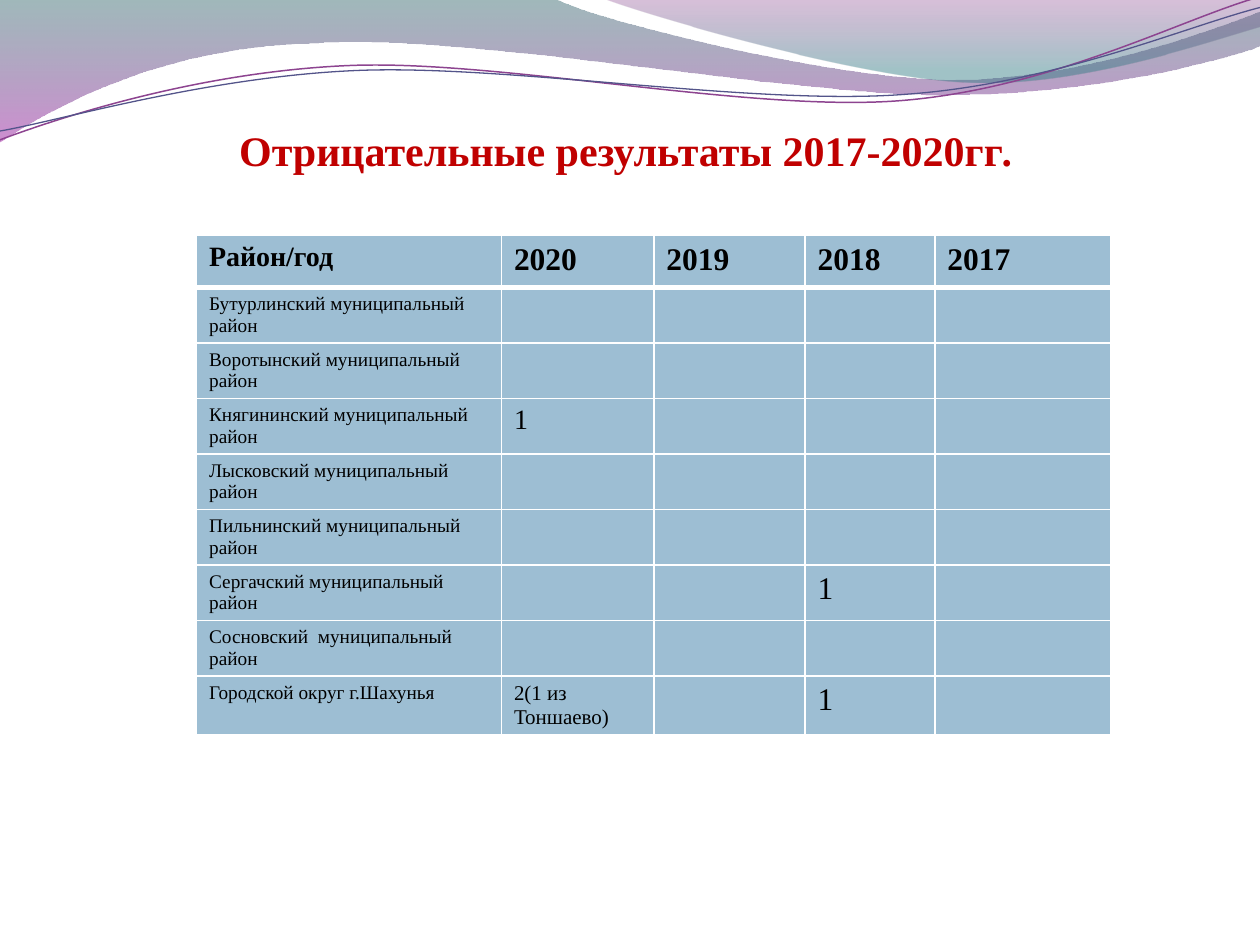
import math
from dataclasses import dataclass

import pptx
import pptx.dml.color
import pptx.enum.text
import pptx.oxml
import pptx.oxml.ns
import pptx.util
from pptx.oxml.ns import qn
from pptx.util import Inches, Pt

FONT = "Times New Roman"
COLORS = {
    "title": "C00000", "text": "000000", "cell": "9DBED3", "border": "FFFFFF",
    "teal": "2D6368", "violet": "A530A9", "plum": "7F2F82", "sea": "2F7B82",
    "purple_line": "8D4490", "blue_line": "53548A",
}
TILT = 357.3  # degrees, for the two thin lines


@dataclass
class Stop:
    position: float
    color: str
    opacity: int  # percent


@dataclass
class Band:
    """Filled outline; segments are lines (2 numbers) or Bezier curves (6)."""
    start: tuple[float, float]
    segments: list[tuple[float, ...]]
    stops: tuple[Stop, Stop]


@dataclass
class Strand:
    """Thin tilted curve, given as it lies on the slide."""
    start: tuple[float, float]
    segments: list[tuple[float, ...]]
    center: tuple[float, float]
    color: str
    width: float


BANDS = [
    Band((0, 0), [
        (4.4, -0.01),
        (4.76, 0.17, 6.64, 0.63, 7.58, 0.63),
        (8.53, 0.63, 9.58, 0.26, 10, 0.09),
        (10.01, 0.36),
        (9.83, 0.44, 8.7, 0.76, 7.46, 0.75),
        (6.22, 0.75, 3.82, 0.28, 2.57, 0.34),
        (1.29, 0.36, 0.46, 0.83, -0.01, 1.13),
        (0, 0),
    ], (Stop(0, "teal", 45), Stop(1, "violet", 55))),
    Band((4.79, -0.01), [
        (5.09, 0.11, 6.82, 0.62, 7.69, 0.65),
        (8.56, 0.69, 9.61, 0.32, 10, 0.21),
        (10, 0),
        (4.79, -0.01),
    ], (Stop(0, "plum", 30), Stop(0.8, "sea", 45))),
]
STRANDS = [
    Strand((0, 1.11), [
        (0.48, 0.93, 1.58, 0.57, 2.77, 0.52),
        (3.95, 0.47, 5.93, 0.89, 7.13, 0.8),
        (8.33, 0.71, 9.38, 0.15, 9.98, -0.02),
    ], (4.99, 0.57), "purple_line", 0.85),
    Strand((0, 1.04), [
        (0.47, 0.96, 1.64, 0.61, 2.83, 0.56),
        (4.03, 0.51, 5.97, 0.84, 7.17, 0.75),
        (8.36, 0.67, 9.41, 0.21, 10, 0.06),
    ], (5, 0.59), "blue_line", 0.75),
]

YEARS = ["2020", "2019", "2018", "2017"]
DISTRICTS = [
    "Бутурлинский муниципальный район",
    "Воротынский муниципальный район",
    "Княгининский муниципальный район",
    "Лысковский муниципальный район",
    "Пильнинский муниципальный район",
    "Сергачский муниципальный район",
    "Сосновский  муниципальный район",
    "Городской округ г.Шахунья",
]
# (row, column): text, size
RESULTS = {
    (3, 1): ("1", 16),
    (6, 3): ("1", 18),
    (8, 1): ("2(1 из Тоншаево)", 12),
    (8, 3): ("1", 18),
}
COL_WIDTHS = [2.42, 1.21, 1.2, 1.03, 1.4]
ROW_HEIGHT = 0.41


def rgb(name: str) -> pptx.dml.color.RGBColor:
    return pptx.dml.color.RGBColor.from_string(COLORS[name])


def style_run(r, size: float, color: str, bold: bool = False) -> None:
    r.font.name = FONT
    r.font.size = Pt(size)
    r.font.bold = bold
    r.font.color.rgb = rgb(color)


def untilt(numbers: tuple[float, ...], center: tuple[float, float]) -> tuple[float, ...]:
    """Turn x, y pairs back about the center, so that TILT restores them."""
    angle, (cx, cy) = math.radians(-TILT), center
    turned = []
    for x, y in zip(numbers[::2], numbers[1::2]):
        dx, dy = x - cx, y - cy
        turned += [cx + dx * math.cos(angle) - dy * math.sin(angle),
                   cy + dx * math.sin(angle) + dy * math.cos(angle)]
    return tuple(turned)


def add_outline(shapes, start: tuple[float, ...],
                segments: list[tuple[float, ...]], close: bool):
    """Build through all points, then merge each curve's three into a Bezier."""
    builder = shapes.build_freeform(Inches(start[0]), Inches(start[1]))
    for seg in segments:
        builder.add_line_segments(
            [(Inches(x), Inches(y)) for x, y in zip(seg[::2], seg[1::2])], close=False)
    if close:
        builder.add_line_segments([], close=True)
    sp = builder.convert_to_shape()
    sp.shadow.inherit = False
    lines = iter(list(sp.element.iter(qn("a:lnTo"))))
    for seg in segments:
        first = next(lines)
        if len(seg) == 6:
            first.tag = qn("a:cubicBezTo")
            for extra in (next(lines), next(lines)):
                first.append(extra[0])
                extra.getparent().remove(extra)
    return sp


def draw_band(shapes, band: Band) -> None:
    sp = add_outline(shapes, band.start, band.segments, close=True)
    sp.line.fill.background()
    sp.fill.gradient()
    sp.fill.gradient_angle = 270  # top to bottom
    for gs, stop in zip(sp.fill.gradient_stops, band.stops):
        gs.color.rgb = rgb(stop.color)
        gs.position = stop.position
    grad = sp.element.spPr.find(qn("a:gradFill"))
    for clr, stop in zip(grad.iter(qn("a:srgbClr")), band.stops):
        clr.append(clr.makeelement(qn("a:alpha"), {"val": str(stop.opacity * 1000)}))


def draw_strand(shapes, strand: Strand) -> None:
    sp = add_outline(shapes, untilt(strand.start, strand.center),
                     [untilt(seg, strand.center) for seg in strand.segments], close=False)
    sp.rotation = TILT
    sp.fill.background()
    sp.line.color.rgb = rgb(strand.color)
    sp.line.width = Pt(strand.width)


def set_borders(cell, top: float, bottom: float) -> None:
    tc_pr = cell._tc.get_or_add_tcPr()
    for side, width in (("L", 1), ("R", 1), ("T", top), ("B", bottom)):
        tc_pr.append(pptx.oxml.parse_xml(
            f'<a:ln{side} {pptx.oxml.ns.nsdecls("a")} w="{Pt(width)}">'
            f'<a:solidFill><a:srgbClr val="{COLORS["border"]}"/></a:solidFill>'
            f'</a:ln{side}>'))


def cell_content(row: int, col: int) -> tuple[str, float]:
    if row == 0:
        return ("Район/год", 16) if col == 0 else (YEARS[col - 1], 18)
    if col == 0:
        return DISTRICTS[row - 1], 11
    return RESULTS.get((row, col), ("", 18))


def draw_table(s) -> None:
    rows, cols = len(DISTRICTS) + 1, len(COL_WIDTHS)
    table = s.shapes.add_table(rows, cols, Inches(1.56), Inches(1.87),
                               Inches(sum(COL_WIDTHS)), Inches(ROW_HEIGHT * rows)).table
    for column, width in zip(table.columns, COL_WIDTHS):
        column.width = Inches(width)
    for i, row in enumerate(table.rows):
        row.height = Inches(ROW_HEIGHT)
        for j, cell in enumerate(row.cells):
            set_borders(cell, top=3 if i == 1 else 1, bottom=3 if i == 0 else 1)
            cell.fill.solid()
            cell.fill.fore_color.rgb = rgb("cell")
            text, size = cell_content(i, j)
            if text:
                cell.text_frame.text = text
                style_run(cell.text_frame.paragraphs[0].runs[0], size, "text", bold=i == 0)


def draw_title(s) -> None:
    sp = s.shapes.add_textbox(Inches(1.8), Inches(0.94), Inches(6.56), Inches(0.5))
    tf = sp.text_frame
    tf.word_wrap = True
    tf.auto_size = pptx.enum.text.MSO_AUTO_SIZE.SHAPE_TO_FIT_TEXT
    tf.text = "Отрицательные результаты 2017-2020гг"
    p = tf.paragraphs[0]
    p.add_run().text = "."
    for r in p.runs:
        style_run(r, 24, "title", bold=True)
    p.runs[-1].font.italic = True


prs = pptx.Presentation()
prs.slide_width, prs.slide_height = Inches(10), Inches(7.5)
s = prs.slides.add_slide(prs.slide_layouts[6])
# Wavy header: filled bands, then a pair of lines
for band in BANDS:
    draw_band(s.shapes, band)
strand_group = s.shapes.add_group_shape()
for strand in STRANDS:
    draw_strand(strand_group.shapes, strand)
# Results by district and year
draw_table(s)
draw_title(s)
prs.save("out.pptx")
